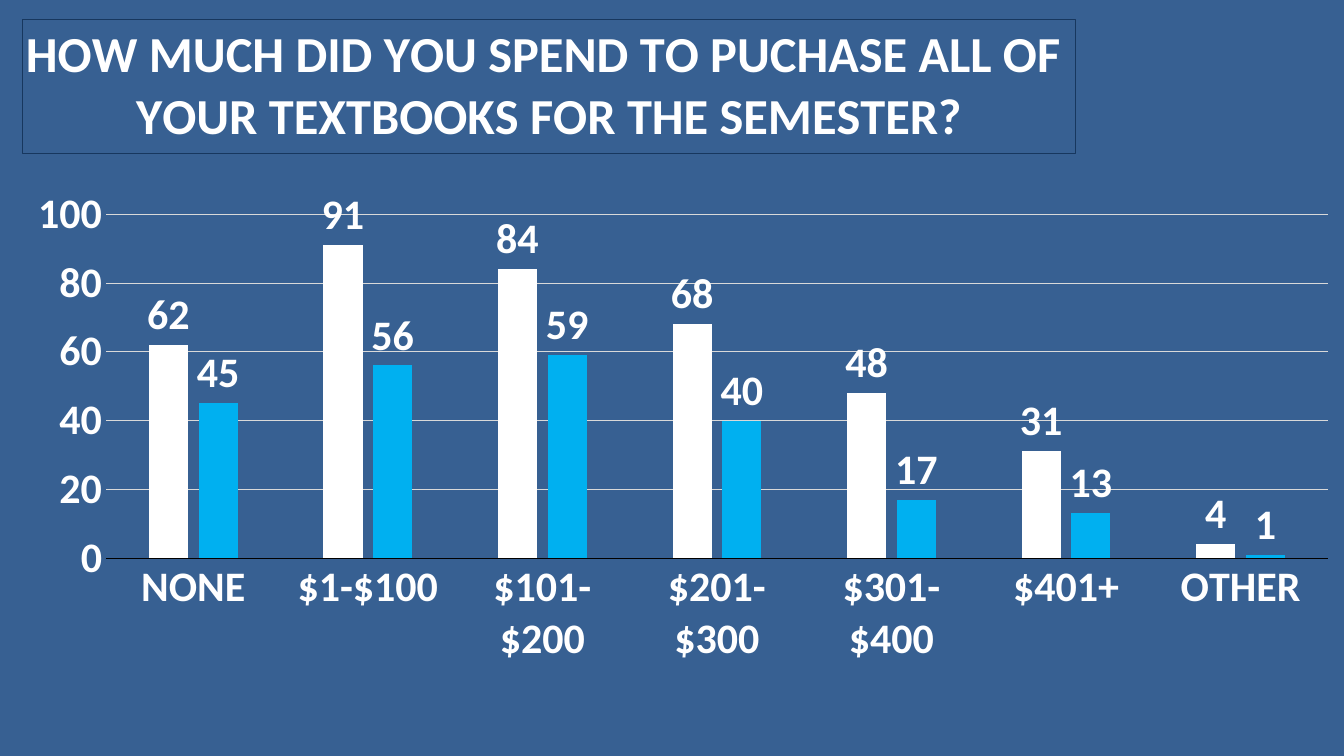
from lxml import etree
from pptx import Presentation, util as u
from pptx.chart.data import CategoryChartData
from pptx.dml.color import RGBColor
from pptx.enum import chart as c, text as t
from pptx.oxml import ns

BLUE = RGBColor(0x37, 0x60, 0x92)
NAVY = RGBColor(0x17, 0x37, 0x5E)
WHITE = RGBColor(0xFF, 0xFF, 0xFF)
SKY = RGBColor(0x00, 0xB0, 0xF0)
GREY = RGBColor(0xD9, 0xD9, 0xD9)
BLACK = RGBColor(0, 0, 0)
CHART_LEFT, CHART_TOP, CHART_WIDTH, CHART_HEIGHT = 11, 19, 1344, 737


def px(value):
    return u.Emu(round(value * 914400 / 100.8))


def place(parent, index, **settings):
    for layout in parent.findall(ns.qn("c:layout")):
        parent.remove(layout)
    layout = etree.Element(ns.qn("c:layout"))
    manual = etree.SubElement(layout, ns.qn("c:manualLayout"))
    for name, value in settings.items():
        etree.SubElement(manual, ns.qn("c:" + name)).set("val", str(value))
    parent.insert(index, layout)


presentation = Presentation()
presentation.slide_width = px(1344)
presentation.slide_height = px(756)
slide = presentation.slides.add_slide(presentation.slide_layouts[6])
slide.background.fill.solid()
slide.background.fill.fore_color.rgb = BLUE

data = CategoryChartData()
data.categories = ["NONE", "$1-$100", "$101-$200", "$201-$300", "$301-$400", "$401+", "OTHER"]
data.add_series("", [62, 91, 84, 68, 48, 31, 4])
data.add_series("", [45, 56, 59, 40, 17, 13, 1])
chart = slide.shapes.add_chart(
    c.XL_CHART_TYPE.COLUMN_CLUSTERED,
    px(CHART_LEFT), px(CHART_TOP), px(CHART_WIDTH), px(CHART_HEIGHT), data,
).chart
chart.has_legend = False
chart.font.name = "Calibri"
chart.font.size = u.Pt(30)
chart.font.bold = True
chart.font.color.rgb = WHITE

title = chart.chart_title
title.include_in_layout = False
title_frame = title.text_frame
title_frame.text = "HOW MUCH DID YOU SPEND TO PUCHASE ALL OF \nYOUR TEXTBOOKS FOR THE SEMESTER?"
for paragraph in title_frame.paragraphs:
    paragraph.alignment = t.PP_ALIGN.CENTER
    for run in paragraph.runs:
        run.font.name = "Calibri"
        run.font.size = u.Pt(36)
        run.font.bold = True
        run.font.color.rgb = WHITE
title.format.fill.background()
title.format.line.color.rgb = NAVY
title.format.line.width = u.Pt(0.75)
place(
    title._element, 1, xMode="edge", yMode="edge",
    x=(23 - CHART_LEFT) / CHART_WIDTH, y=0,
)

plot = chart.plots[0]
plot.gap_width = 219
plot.overlap = -27
plot.vary_by_categories = False
for series, color in zip(plot.series, (WHITE, SKY)):
    series.format.fill.solid()
    series.format.fill.fore_color.rgb = color
    labels = series.data_labels
    labels.show_value = True
    labels.position = c.XL_LABEL_POSITION.OUTSIDE_END
    labels.font.name = "Calibri"
    labels.font.size = u.Pt(30)
    labels.font.bold = True
    labels.font.color.rgb = WHITE

for axis in (chart.category_axis, chart.value_axis):
    axis.major_tick_mark = c.XL_TICK_MARK.NONE
    axis.minor_tick_mark = c.XL_TICK_MARK.NONE
    axis.tick_labels.font.name = "Calibri"
    axis.tick_labels.font.size = u.Pt(30)
    axis.tick_labels.font.bold = True
    axis.tick_labels.font.color.rgb = WHITE
chart.category_axis.format.line.color.rgb = BLACK
chart.category_axis.format.line.width = u.Pt(0.75)
value_axis = chart.value_axis
value_axis.minimum_scale = 0
value_axis.maximum_scale = 100
value_axis.major_unit = 20
value_axis.format.line.fill.background()
value_axis.major_gridlines.format.line.color.rgb = GREY
value_axis.major_gridlines.format.line.width = u.Pt(0.75)

place(
    chart._chartSpace.chart.plotArea, 0,
    layoutTarget="inner", xMode="edge", yMode="edge",
    x=(106 - CHART_LEFT) / CHART_WIDTH, y=(214 - CHART_TOP) / CHART_HEIGHT,
    w=1222 / CHART_WIDTH, h=344 / CHART_HEIGHT,
)

presentation.save("out.pptx")
